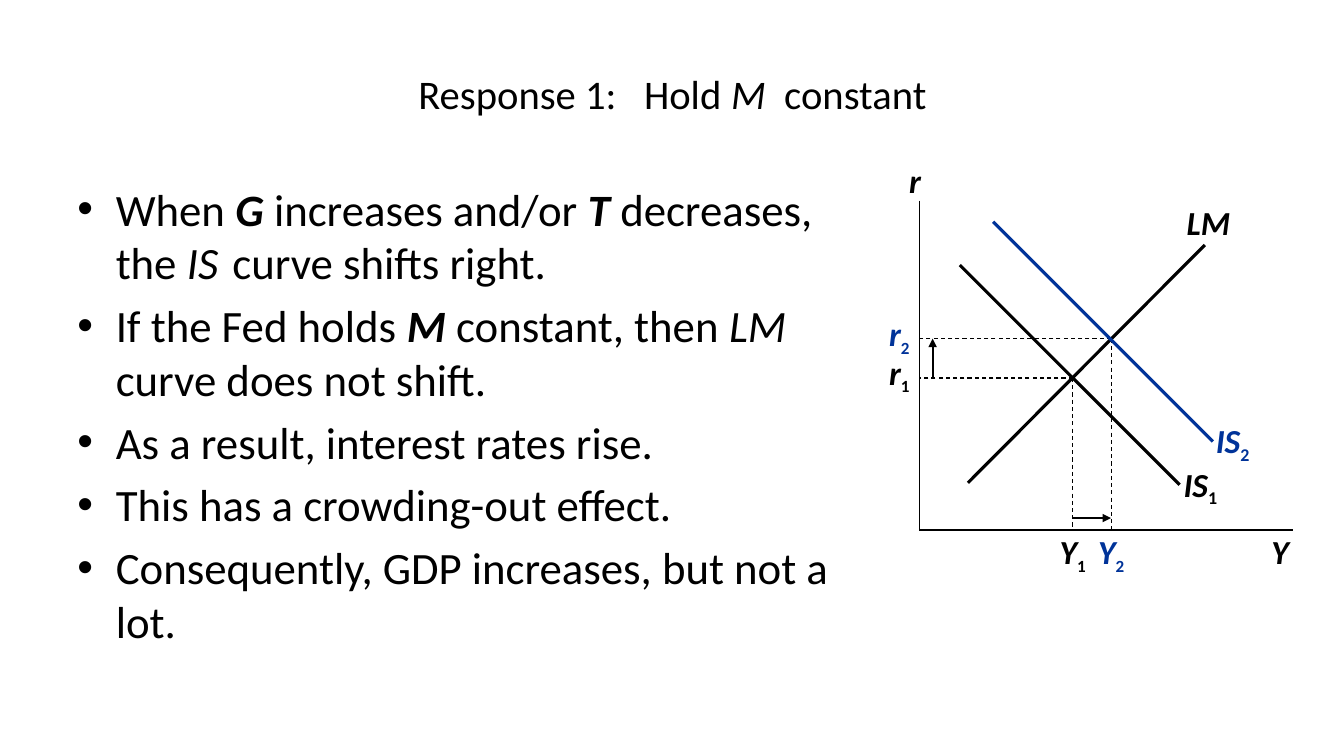
from dataclasses import dataclass

from lxml import etree
from pptx import Presentation
from pptx.dml.color import RGBColor
from pptx.enum.dml import MSO_LINE
from pptx.enum.shapes import MSO_CONNECTOR
from pptx.enum.text import MSO_ANCHOR, PP_ALIGN
from pptx.oxml.ns import qn
from pptx.util import Inches, Pt

BLACK = RGBColor(0x00, 0x00, 0x00)
BLUE = RGBColor(0x00, 0x33, 0x99)
STRAIGHT = MSO_CONNECTOR.STRAIGHT
DASH = MSO_LINE.DASH
LEFT, CENTER = PP_ALIGN.LEFT, PP_ALIGN.CENTER
TOP, MIDDLE = MSO_ANCHOR.TOP, MSO_ANCHOR.MIDDLE
FONT = "Calibri"
BULLET_INDENT = 0.38


@dataclass(frozen=True)
class Span:
    text: str
    size: float
    bold: bool = False
    italic: bool = False
    subscript: bool = False


@dataclass(frozen=True)
class Line:
    start: tuple[float, float]
    end: tuple[float, float]
    width: float
    color: RGBColor = BLACK
    dashed: bool = False
    arrow: bool = False


@dataclass(frozen=True)
class Label:
    name: str
    place: tuple[float, float, float, float]
    color: RGBColor = BLACK
    subscript: str = ""
    subscript_size: float = 21
    align: PP_ALIGN = CENTER


def body(text: str) -> Span:
    return Span(text, 32)


def symbol(text: str, bold: bool = False) -> Span:
    return Span(text, 32, bold=bold, italic=True)


TITLE = [Span("Response 1:   Hold ", 29), Span("M", 29, italic=True), Span("  constant", 29)]

BULLETS = [
    [body("When "), symbol("G ", True), body("increases and/or "), symbol("T", True),
     body(" decreases, the "), symbol("IS"), Span(" ", 12), body(" curve shifts right.")],
    [body("If the Fed holds "), symbol("M", True), body(" constant, then "),
     symbol("LM"), body(" curve does not shift.")],
    [body("As a result, interest rates rise.")],
    [body("This has a crowding-out effect.")],
    [body("Consequently, GDP increases, but not a lot.")],
]

# Axes and the two equilibria
AXIS_X, AXIS_Y = 9.12, 5.26
Y1, R1 = 10.64, 3.75
Y2, R2 = 11.02, 3.36

LINES = [
    Line((AXIS_X, 1.99), (AXIS_X, AXIS_Y), 1),
    Line((AXIS_X, AXIS_Y), (12.82, AXIS_Y), 1),
    Line((Y1, R1), (AXIS_X, R1), 0.75, dashed=True),
    Line((Y1, R1), (Y1, AXIS_Y), 0.75, dashed=True),
    Line((Y2, R2), (AXIS_X, R2), 0.75, dashed=True),
    Line((Y2, R2), (Y2, AXIS_Y), 0.75, dashed=True),
    Line((9.52, 2.63), (11.7, 4.81), 2.25),
    Line((9.6, 4.79), (11.95, 2.43), 2.25),
    Line((9.85, 2.2), (12.03, 4.38), 2.25, BLUE),
    Line((Y1, 5.14), (Y2, 5.14), 1.5, arrow=True),
    Line((9.25, R1), (9.25, R2), 1.5, arrow=True),
]

LABELS = [
    Label("r", (8.85, 1.54, 0.45, 0.5)),
    Label("Y ", (12.42, 5.22, 0.63, 0.5)),
    Label("LM", (11.67, 1.95, 0.85, 0.5), align=LEFT),
    Label("IS", (11.64, 4.55, 0.75, 0.5), BLACK, "1", 22, LEFT),
    Label("IS", (11.96, 4.12, 0.75, 0.5), BLUE, "2", 22, LEFT),
    Label("r", (8.67, 3.44, 0.5, 0.5), BLACK, "1"),
    Label("r", (8.67, 3.06, 0.5, 0.5), BLUE, "2"),
    Label("Y", (10.35, 5.22, 0.58, 0.5), BLACK, "1"),
    Label("Y", (10.73, 5.22, 0.58, 0.5), BLUE, "2"),
]


def add_text(page, place: tuple[float, float, float, float], paragraphs: list[list[Span]],
             color: RGBColor = BLACK, align: PP_ALIGN = LEFT, anchor: MSO_ANCHOR = TOP):
    box = page.shapes.add_textbox(*(Inches(length) for length in place))
    frame = box.text_frame
    frame.word_wrap = True
    frame.vertical_anchor = anchor
    for index, spans in enumerate(paragraphs):
        para = frame.add_paragraph() if index else frame.paragraphs[0]
        para.alignment = align
        for span in spans:
            run = para.add_run()
            run.text = span.text
            font = run.font
            font.name, font.size = FONT, Pt(span.size)
            font.bold, font.italic = span.bold, span.italic
            font.color.rgb = color
            if span.subscript:
                run._r.get_or_add_rPr().set("baseline", "-25000")
    return box


def add_bullets(box) -> None:
    for para in box.text_frame.paragraphs:
        para.space_after = Pt(6.4)
        properties = para._p.get_or_add_pPr()
        properties.set("marL", str(Inches(BULLET_INDENT)))
        properties.set("indent", str(-Inches(BULLET_INDENT)))
        etree.SubElement(properties, qn("a:buFont")).set("typeface", "Arial")
        etree.SubElement(properties, qn("a:buChar")).set("char", "•")


def add_line(page, line: Line) -> None:
    connector = page.shapes.add_connector(
        STRAIGHT, *(Inches(length) for length in line.start + line.end))
    connector.line.width = Pt(line.width)
    connector.line.color.rgb = line.color
    if line.dashed:
        connector.line.dash_style = DASH
    if line.arrow:
        outline = connector.line._get_or_add_ln()
        etree.SubElement(outline, qn("a:tailEnd")).set("type", "triangle")
    etree.SubElement(connector._element.spPr, qn("a:effectLst"))


def add_label(page, label: Label) -> None:
    spans = [Span(label.name, 24, bold=True, italic=True)]
    if label.subscript:
        spans.append(Span(label.subscript, label.subscript_size, bold=True, subscript=True))
    add_text(page, label.place, [spans], label.color, label.align)


def main() -> None:
    deck = Presentation()
    deck.slide_width, deck.slide_height = Inches(13.33), Inches(7.5)
    page = deck.slides.add_slide(deck.slide_layouts[6])

    # Title and bullet list
    add_text(page, (0.67, 0.3, 12, 1.25), [TITLE], align=CENTER, anchor=MIDDLE)
    add_bullets(add_text(page, (0.67, 1.75, 8.07, 4.95), BULLETS))

    # IS-LM diagram
    for line in LINES:
        add_line(page, line)
    for label in LABELS:
        add_label(page, label)

    deck.save("out.pptx")


if __name__ == "__main__":
    main()
